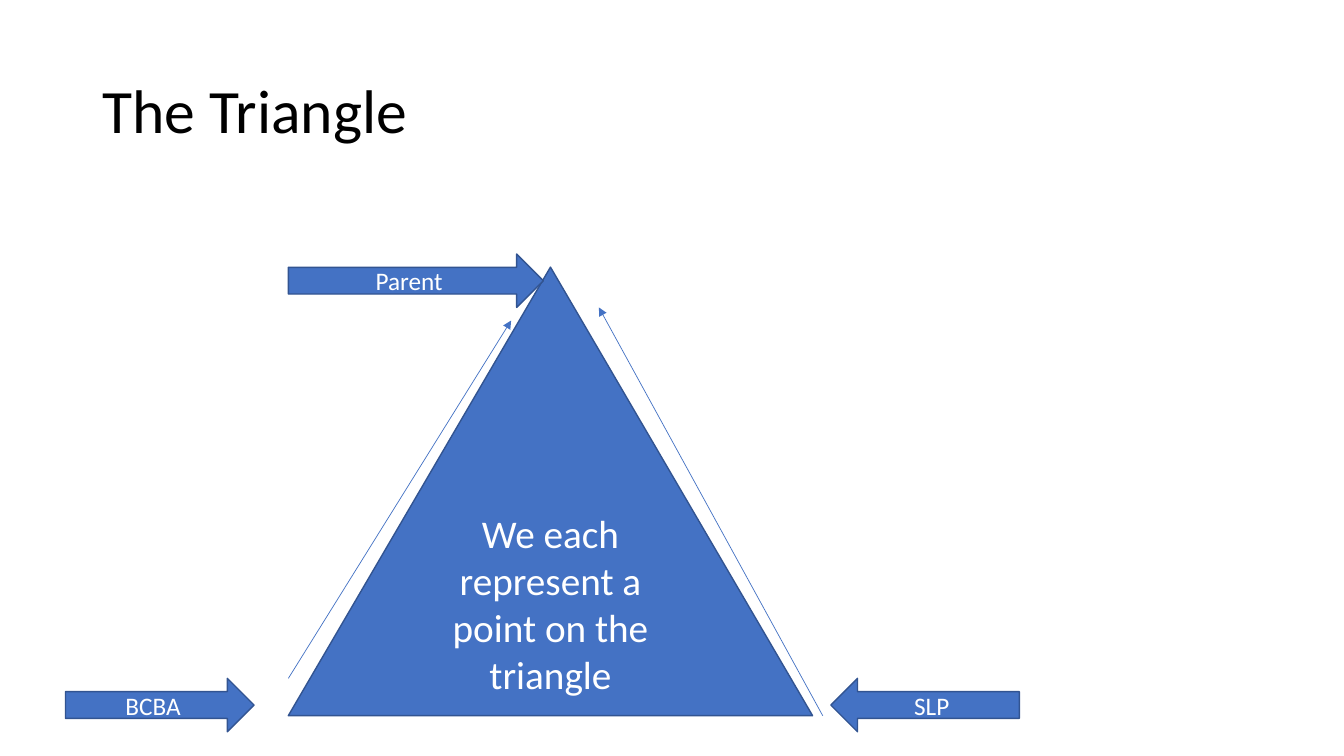
from pptx import Presentation
from pptx.dml.color import RGBColor
from pptx.enum.shapes import MSO_CONNECTOR as Link, MSO_SHAPE as Shape
from pptx.enum.text import MSO_ANCHOR as Anchor, PP_ALIGN as Align
from pptx.oxml.ns import qn
from lxml.etree import SubElement

PX = 9144  # 100 px to the inch
FONT = "Calibri"
BLUE, EDGE, WHITE, BLACK = "4472C4", "325491", "FFFFFF", "000000"


def rgb(code):
    return RGBColor.from_string(code)


def emu(*sizes):
    return [size * PX for size in sizes]


def write(shape, text, size, color, align):
    frame = shape.text_frame
    frame.word_wrap = True
    frame.vertical_anchor = Anchor.MIDDLE
    para = frame.paragraphs[0]
    para.text = text
    para.alignment = align
    font = para.font
    font.name, font.size = FONT, size * 12700
    font.color.rgb = rgb(color)
    return para


def block(slide, kind, box, text, size):
    """Add a filled, outlined shape with centred white text."""
    shape = slide.shapes.add_shape(kind, *emu(*box))
    shape.shadow.inherit = False
    shape.fill.solid()
    shape.fill.fore_color.rgb = rgb(BLUE)
    shape.line.color.rgb = rgb(EDGE)
    shape.line.width = 12700
    write(shape, text, size, WHITE, Align.CENTER)


def arrow(slide, start, end):
    """Add a thin line with an arrowhead at its end."""
    line = slide.shapes.add_connector(Link.STRAIGHT, *emu(*start, *end))
    line.line.color.rgb = rgb(BLUE)
    line.line.width = 6350
    SubElement(line.line._get_or_add_ln(), qn("a:tailEnd"), type="triangle")
    SubElement(line._element.spPr, qn("a:effectLst"))


def title(slide, box, text):
    shape = slide.shapes.add_textbox(*emu(*box))
    write(shape, text, 44, BLACK, Align.LEFT).line_spacing = 0.9


def diagram(slide, box):
    """Draw the triangle in its box, with labels at its corners and arrows up its sides."""
    left, top, width, height = box
    right, base = left + width, top + height
    block(slide, Shape.ISOSCELES_TRIANGLE, box,
          "We each represent a point on the triangle", 28)
    arrow(slide, (right + 10, base), (right - 212, top + 40))
    arrow(slide, (left, base - 37), (left + 221, top + 53))
    labels = [
        ("Parent", Shape.RIGHT_ARROW, left, top - 13, 253),
        ("BCBA", Shape.RIGHT_ARROW, left - 221, base - 37, 187),
        ("SLP", Shape.LEFT_ARROW, right + 18, base - 37, 187),
    ]
    for text, kind, x, y, wide in labels:
        block(slide, kind, (x, y, wide, 53), text, 18)


def main():
    deck = Presentation()
    deck.slide_width, deck.slide_height = emu(1333, 750)
    slide = deck.slides.add_slide(deck.slide_layouts[6])
    title(slide, (92, 40, 1150, 145), "The Triangle")
    diagram(slide, (286, 265, 520, 445))
    deck.save("out.pptx")


if __name__ == "__main__":
    main()
